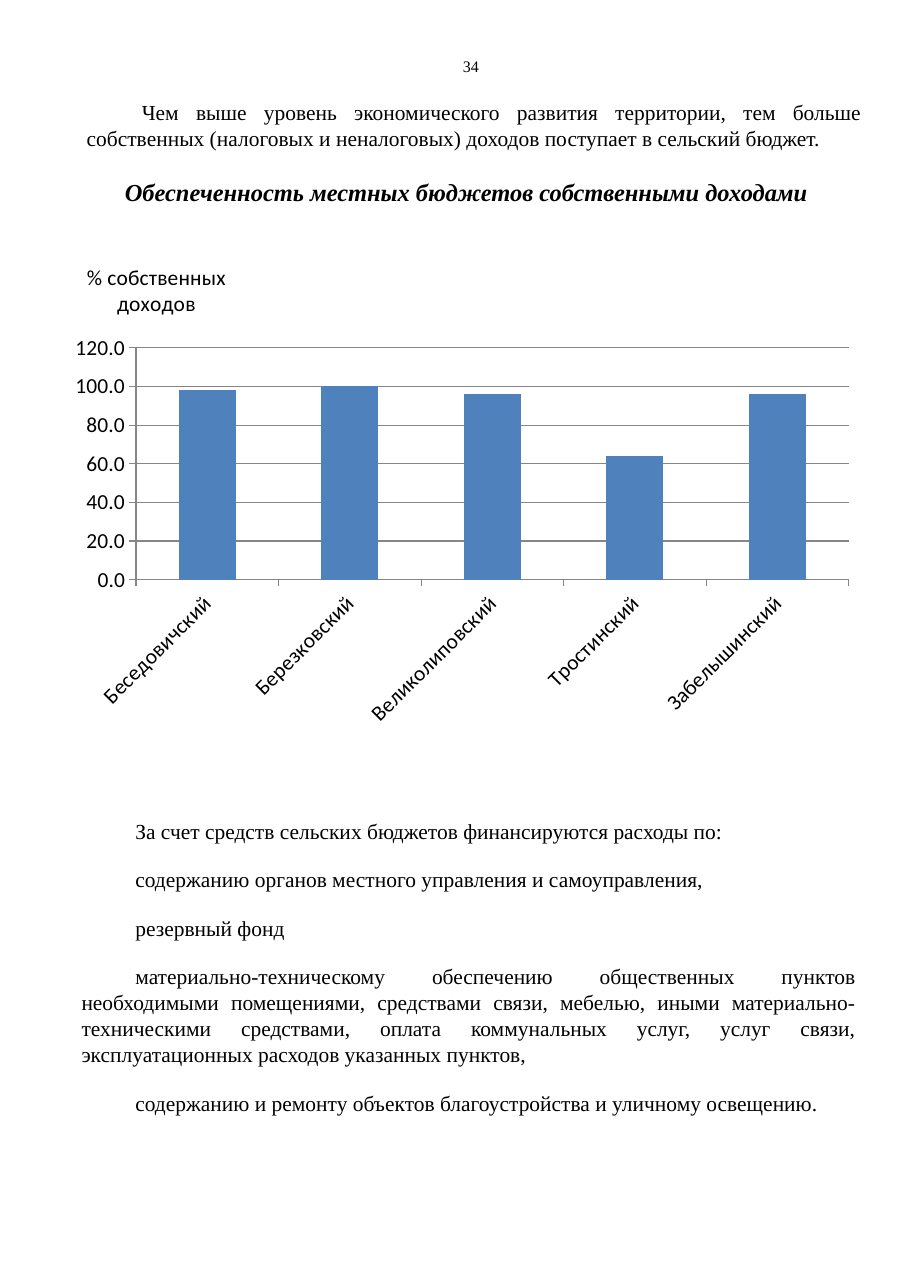
from lxml.etree import SubElement
from pptx import Presentation
from pptx.chart.data import CategoryChartData
from pptx.dml.color import RGBColor
from pptx.enum.chart import XL_CHART_TYPE, XL_TICK_MARK
from pptx.enum.text import PP_ALIGN
from pptx.oxml import parse_xml
from pptx.oxml.ns import nsdecls, qn
from pptx.util import Cm, Pt

INTRODUCTION = (
    "Чем выше уровень экономического развития территории, тем больше "
    "собственных (налоговых и неналоговых) доходов поступает в сельский бюджет."
)
EXPENSES = [
    "За счет средств сельских бюджетов финансируются расходы по:",
    "содержанию органов местного управления и самоуправления,",
    "резервный фонд",
    "материально-техническому обеспечению общественных пунктов необходимыми "
    "помещениями, средствами связи, мебелью, иными материально-техническими "
    "средствами, оплата коммунальных услуг, услуг связи, эксплуатационных "
    "расходов указанных пунктов,",
    "содержанию и ремонту объектов благоустройства и уличному освещению.",
]
OWN_INCOME = {
    "Беседовичский": 98,
    "Березковский": 100,
    "Великолиповский": 96,
    "Тростинский": 64,
    "Забелышинский": 96,
}


def color(hex_value):
    return RGBColor.from_string(hex_value)


def apply(target, values):
    for name, value in values.items():
        setattr(target, name, value)


class Page:
    TEXT_FONT = "Times New Roman"
    CHART_FONT = "Calibri"
    BLACK, BLUE, GRAY = "000000", "4F81BD", "868686"

    def __init__(self, presentation):
        self.slide = presentation.slides.add_slide(presentation.slide_layouts[6])

    def style_font(self, font, name, size, **values):
        apply(font, {"name": name, "size": Pt(size), "bold": False, **values})
        font.color.rgb = color(self.BLACK)

    def text(self, box, paragraphs, size, indent=0, font_values=None, **values):
        shape = self.slide.shapes.add_textbox(*map(Cm, box))
        frame = shape.text_frame
        apply(frame, {"word_wrap": True, "margin_left": 0, "margin_right": 0,
                      "margin_top": 0, "margin_bottom": 0})
        for index, content in enumerate(paragraphs):
            paragraph = frame.add_paragraph() if index else frame.paragraphs[0]
            apply(paragraph, values)
            if indent:
                paragraph._p.get_or_add_pPr().set("indent", str(Cm(indent)))
            run = paragraph.add_run()
            run.text = content
            self.style_font(run.font, self.TEXT_FONT, size, **(font_values or {}))

    def place(self, parent, index, **settings):
        """Give a chart part a manual layout."""
        for layout in parent.findall(qn("c:layout")):
            parent.remove(layout)
        layout = parse_xml(f"<c:layout {nsdecls('c')}/>")
        manual = SubElement(layout, qn("c:manualLayout"))
        for name, value in settings.items():
            SubElement(manual, qn(f"c:{name}")).set("val", str(value))
        parent.insert(index, layout)

    def column_chart(self, box, title, values, size):
        data = CategoryChartData(number_format="#,##0.0")
        data.categories = list(values)
        data.add_series("Series 1", list(values.values()))
        chart = self.slide.shapes.add_chart(
            XL_CHART_TYPE.COLUMN_CLUSTERED, *map(Cm, box), data).chart
        self.style_font(chart.font, self.CHART_FONT, size)
        apply(chart, {"has_legend": False, "has_title": True})

        # Title above the left end of the value axis
        chart.chart_title.text_frame.text = title
        for paragraph in chart.chart_title.text_frame.paragraphs:
            paragraph.alignment = PP_ALIGN.CENTER
            for run in paragraph.runs:
                self.style_font(run.font, self.CHART_FONT, size)
        title_element = chart.element.find(".//" + qn("c:title"))
        self.place(title_element, 1, xMode="edge", yMode="edge", x=0.03, y=0.03)

        # Plot area and columns
        plot_area = chart.element.find(".//" + qn("c:plotArea"))
        self.place(plot_area, 0, layoutTarget="inner", xMode="edge", yMode="edge",
                   x=0.095, y=0.21, w=0.885, h=0.471)
        plot = chart.plots[0]
        apply(plot, {"gap_width": 150, "vary_by_categories": False})
        fill = plot.series[0].format.fill
        fill.solid()
        fill.fore_color.rgb = color(self.BLUE)

        # Axes
        value_axis, category_axis = chart.value_axis, chart.category_axis
        apply(value_axis, {"minimum_scale": 0, "maximum_scale": 120, "major_unit": 20,
                           "has_major_gridlines": True})
        apply(value_axis.tick_labels, {"number_format": "#,##0.0",
                                       "number_format_is_linked": False})
        for axis in (value_axis, category_axis):
            apply(axis, {"major_tick_mark": XL_TICK_MARK.OUTSIDE,
                         "minor_tick_mark": XL_TICK_MARK.NONE})
            self.style_font(axis.tick_labels.font, self.CHART_FONT, size)
        for part in (value_axis, category_axis, value_axis.major_gridlines):
            line = part.format.line
            line.color.rgb = color(self.GRAY)
            line.width = Pt(0.75)
        labels = plot_area.find(f"{qn('c:catAx')}/{qn('c:txPr')}/{qn('a:bodyPr')}")
        labels.set("rot", str(-45 * 60000))


def main():
    presentation = Presentation()
    apply(presentation, {"slide_width": Cm(21), "slide_height": Cm(29.7)})
    page = Page(presentation)

    # Page number
    page.text((10.67, 1.3, 0.6, 0.4), ["34"], 10.5)

    # Introduction and heading
    page.text((2, 2.26, 17.86, 1.78), [INTRODUCTION], 14, indent=1.27,
              alignment=PP_ALIGN.JUSTIFY, line_spacing=Pt(17.3))
    page.text((2, 4.09, 17.5, 0.76),
              ["Обеспеченность местных бюджетов собственными доходами"], 16,
              font_values={"bold": True, "italic": True}, alignment=PP_ALIGN.CENTER)

    # Share of own income
    page.column_chart((1.37, 5.64, 18.57, 11.35), "% собственных\nдоходов",
                      OWN_INCOME, 14)

    # Expenses
    page.text((1.88, 18.85, 17.85, 9.2), EXPENSES, 14, indent=1.24,
              alignment=PP_ALIGN.JUSTIFY, line_spacing=Pt(17), space_after=Pt(14.7))

    presentation.save("out.pptx")


if __name__ == "__main__":
    main()
